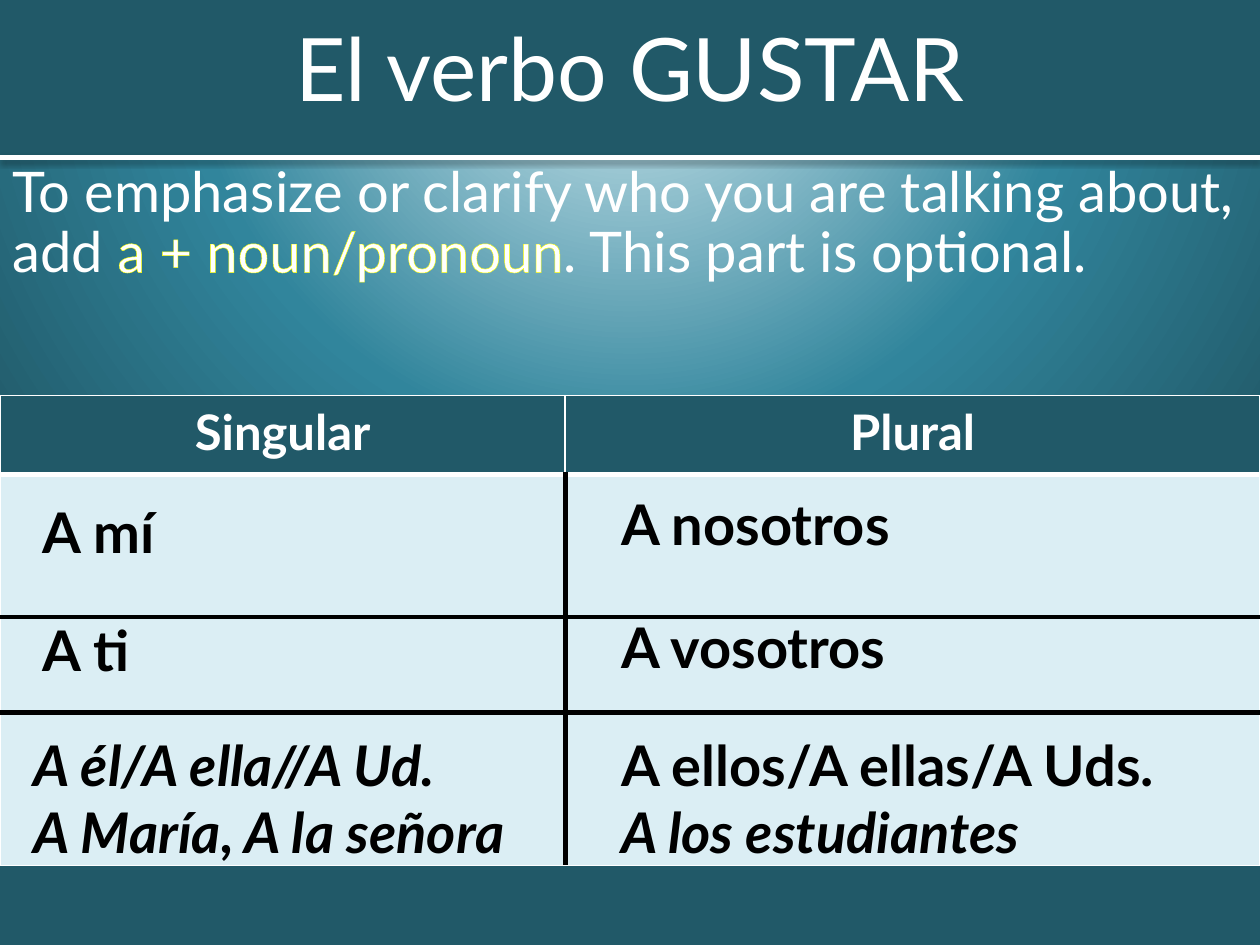
from pptx import Presentation
from pptx.dml.color import RGBColor as RGB
from pptx.enum.shapes import MSO_CONNECTOR as Line, MSO_SHAPE as Shape
from pptx.enum.text import MSO_ANCHOR as Anchor, PP_ALIGN as Align
from pptx.oxml import parse_xml
from pptx.oxml.ns import nsdecls, qn
from pptx.util import Pt


class Theme:
    font = "Lato"
    white, black = "FFFFFF", "000000"
    dark, mid, pale = "215968", "31859C", "DBEEF4"
    glow = "FFFF00"
    title, body, head = 50, 32, 28
    thin, thick = 1, 3


PLAIN = "{2D5ABB26-0587-4C30-8999-92F81FD0307C}"  # no style, no grid
NS = nsdecls("a")


def style(par, size, color, bold=None, italic=None):
    for run in par.runs:
        font = run.font
        font.name, font.size = Theme.font, Pt(size)
        font.color.rgb = RGB.from_string(color)
        font.bold, font.italic = bold, italic


def grid(left, top, cols, rows):
    """Add a table without any built-in style and return it."""
    frame = slide.shapes.add_table(len(rows), len(cols), Pt(left), Pt(top),
                                   Pt(sum(cols)), Pt(sum(rows)))
    table = frame.table
    table.first_row = table.horz_banding = False
    frame._element.find(".//" + qn("a:tableStyleId")).text = PLAIN
    for col, width in zip(table.columns, cols):
        col.width = Pt(width)
    for row, height in zip(table.rows, rows):
        row.height = Pt(height)
    return table


prs = Presentation()
prs.slide_width, prs.slide_height = Pt(720), Pt(540)
slide = prs.slides.add_slide(prs.slide_layouts[6])

# Background: a round glow
slide.background.fill.solid()
back = slide.element.find(".//" + qn("p:bgPr"))
stops = "".join(
    f'<a:gs pos="{pos * 1000}"><a:srgbClr val="{color}"/></a:gs>'
    for pos, color in ((0, Theme.pale), (57, Theme.mid), (100, Theme.dark)))
back.replace(back[0], parse_xml(
    f'<a:gradFill {NS} rotWithShape="1"><a:gsLst>{stops}</a:gsLst>'
    '<a:path path="circle"><a:fillToRect l="50000" t="-80000" r="50000" '
    'b="180000"/></a:path></a:gradFill>'))

# Title band
band = slide.shapes.add_shape(Shape.RECTANGLE, 0, 0, Pt(720), Pt(90))
band.shadow.inherit = False
band.fill.solid()
band.fill.fore_color.rgb = RGB.from_string(Theme.dark)
band.line.fill.background()

# Rule text
box = slide.shapes.add_textbox(0, Pt(90), Pt(720), Pt(374.4))
box.text_frame.word_wrap = True
par = box.text_frame.paragraphs[0]
par.line_spacing = 0.9
for part in ("To emphasize or clarify who you are talking about, add ",
             "a + noun/pronoun", ". This part is optional."):
    par.add_run().text = part
style(par, Theme.body, Theme.white)
par.runs[1].font._element.insert(0, parse_xml(
    f'<a:ln {NS} w="{Pt(1.5)}"><a:solidFill><a:srgbClr val="{Theme.glow}"/>'
    '</a:solidFill></a:ln>'))

# Line under the band
rule = slide.shapes.add_connector(Line.STRAIGHT, 0, Pt(90), Pt(720), Pt(90))
rule.line.color.rgb = RGB.from_string(Theme.white)
rule.line.width = Pt(Theme.thick)
rule._element.spPr.append(parse_xml(
    f'<a:effectLst {NS}><a:outerShdw blurRad="{Pt(3.1)}" dist="{Pt(1.6)}" '
    f'dir="5400000" rotWithShape="0"><a:srgbClr val="{Theme.black}">'
    '<a:alpha val="38000"/></a:srgbClr></a:outerShdw></a:effectLst>'))

# Title
box = slide.shapes.add_textbox(0, 0, Pt(720), Pt(76.3))
frame = box.text_frame
frame.word_wrap = True
frame.vertical_anchor = Anchor.MIDDLE
frame.text = "El verbo GUSTAR"
frame.paragraphs[0].alignment = Align.CENTER
style(frame.paragraphs[0], Theme.title, Theme.white)

# Main table: black lines inside the body, white ones elsewhere
heads = ("Singular", "Plural")
rows = (45, 81.5, 54.5, 87.5)
main = grid(0, 226, (323, 397), rows)
last = len(rows) - 1
outer = (Theme.white, Theme.thin)
inner = (Theme.black, Theme.thick)
under = (Theme.white, Theme.thick)
for r in range(len(rows)):
    for c, head in enumerate(heads):
        cell = main.cell(r, c)
        cell.fill.solid()
        cell.fill.fore_color.rgb = RGB.from_string(
            Theme.pale if r else Theme.dark)
        edges = {
            "L": inner if r and c == 1 else outer,
            "R": inner if r and c == 0 else outer,
            "T": inner if r > 1 else under if r == 1 else outer,
            "B": under if r == 0 else outer if r == last else inner,
        }
        props = cell._tc.get_or_add_tcPr()
        for i, (side, (color, width)) in enumerate(edges.items()):
            props.insert(i, parse_xml(
                f'<a:ln{side} {NS} w="{Pt(width)}"><a:solidFill>'
                f'<a:srgbClr val="{color}"/></a:solidFill></a:ln{side}>'))
        if r == 0:
            cell.text_frame.text = head
            par = cell.text_frame.paragraphs[0]
            par.alignment = Align.CENTER
            style(par, Theme.head, Theme.white, True)

# Phrases: left, top, width, height, then (text, italic) per line
phrases = (
    (17.3, 281, 256, 45, [("A mí", None)]),
    (17.3, 348.5, 284, 45, [("A ti", None)]),
    (12.2, 414, 333, 85, [("A él/A ella//A Ud.", True),
                          ("A María, A la señora", True)]),
    (347.8, 276.5, 203, 49, [("A nosotros", None)]),
    (347.8, 347, 256, 45, [("A vosotros", None)]),
    (347.8, 414, 349, 84, [("A ellos/A ellas/A Uds.", None),
                           ("A los estudiantes", True)]),
)
for left, top, width, height, lines in phrases:
    cell = grid(left, top, (width,), (height,)).cell(0, 0)
    cell.fill.background()
    cell.text_frame.text = "\n".join(text for text, _ in lines)
    for par, (_, italic) in zip(cell.text_frame.paragraphs, lines):
        style(par, Theme.body, Theme.black, True, italic)

prs.save("out.pptx")
